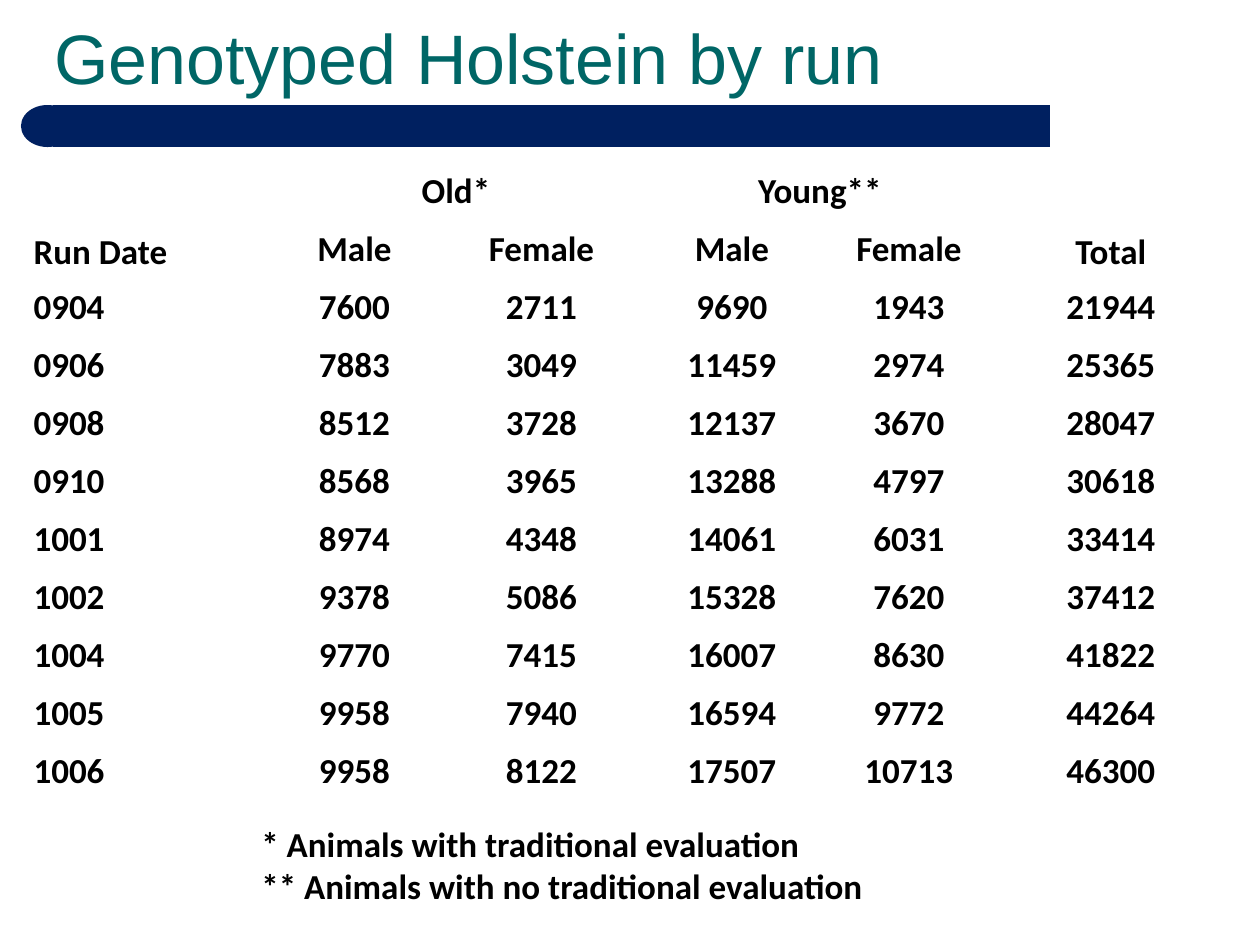
from pptx import Presentation
from pptx.dml.color import RGBColor
from pptx.enum.shapes import MSO_SHAPE
from pptx.enum.text import MSO_ANCHOR, PP_ALIGN
from pptx.util import Pt

PX = 914400 // 126
LEFT, CENTER = PP_ALIGN.LEFT, PP_ALIGN.CENTER
TOP, BOTTOM = MSO_ANCHOR.TOP, MSO_ANCHOR.BOTTOM
RECTANGLE, OVAL = MSO_SHAPE.RECTANGLE, MSO_SHAPE.OVAL

THEME = {
    "title": {"name": "Arial", "size": Pt(40), "bold": False, "color": "006666"},
    "body": {"name": "Calibri", "size": Pt(20), "bold": True, "color": "000000"},
    "bar": "002060",
}

TITLE = "Genotyped Holstein by run"
HEADERS = [
    ("Run Date", "Old*", "", "Young**", "", "Total"),
    ("", "Male", "Female", "Male", "Female", ""),
]
RUNS = [
    ("0904", 7600, 2711, 9690, 1943, 21944),
    ("0906", 7883, 3049, 11459, 2974, 25365),
    ("0908", 8512, 3728, 12137, 3670, 28047),
    ("0910", 8568, 3965, 13288, 4797, 30618),
    ("1001", 8974, 4348, 14061, 6031, 33414),
    ("1002", 9378, 5086, 15328, 7620, 37412),
    ("1004", 9770, 7415, 16007, 8630, 41822),
    ("1005", 9958, 7940, 16594, 9772, 44264),
    ("1006", 9958, 8122, 17507, 10713, 46300),
]
FOOTNOTES = [
    "* Animals with traditional evaluation",
    "** Animals with no traditional evaluation",
]

COLUMN_WIDTHS = [248, 171, 203, 178, 176, 228]
ROW_HEIGHT = 58
TABLE_LEFT, TABLE_TOP = 21, 164
# (first row, first column, last row, last column)
MERGES = [(0, 0, 1, 0), (0, 1, 0, 2), (0, 3, 0, 4), (0, 5, 1, 5)]
BAR_PARTS = [(RECTANGLE, 53, 997), (OVAL, 21, 53)]  # shape, left, width
BAR_TOP, BAR_HEIGHT = 105, 42


def emu(*lengths):
    return [length * PX for length in lengths]


def write(para, text, style, align=LEFT):
    para.alignment = align
    span = para.add_run()
    span.text = text
    for name, value in THEME[style].items():
        if name == "color":
            span.font.color.rgb = RGBColor.from_string(value)
        else:
            setattr(span.font, name, value)


def add_text(page, lines, style, area, anchor):
    frame = page.shapes.add_textbox(*emu(*area)).text_frame
    frame.word_wrap = True
    frame.vertical_anchor = anchor
    for index, line in enumerate(lines):
        para = frame.add_paragraph() if index else frame.paragraphs[0]
        write(para, line, style)


def add_bar(page):
    for kind, left, width in BAR_PARTS:
        part = page.shapes.add_shape(kind, *emu(left, BAR_TOP, width, BAR_HEIGHT))
        part.shadow.inherit = False
        part.fill.solid()
        part.fill.fore_color.rgb = RGBColor.from_string(THEME["bar"])
        part.line.fill.background()


def add_run_table(page):
    rows = HEADERS + RUNS
    area = emu(TABLE_LEFT, TABLE_TOP, sum(COLUMN_WIDTHS), ROW_HEIGHT * len(rows))
    table = page.shapes.add_table(len(rows), len(COLUMN_WIDTHS), *area).table
    table.first_row = table.horz_banding = False
    for column, width in zip(table.columns, COLUMN_WIDTHS):
        column.width = width * PX
    for row in table.rows:
        row.height = ROW_HEIGHT * PX
    for top, left, bottom, right in MERGES:
        table.cell(top, left).merge(table.cell(bottom, right))
    for r, values in enumerate(rows):
        for c, value in enumerate(values):
            cell = table.cell(r, c)
            cell.fill.background()
            if cell.is_spanned:
                continue
            tall = cell.is_merge_origin and cell.span_height > 1
            cell.vertical_anchor = BOTTOM if tall else TOP
            write(cell.text_frame.paragraphs[0], str(value), "body",
                  CENTER if c else LEFT)


def main():
    deck = Presentation()
    deck.slide_width, deck.slide_height = emu(1260, 945)
    page = deck.slides.add_slide(deck.slide_layouts[6])
    add_text(page, [TITLE], "title", (42, 21, 1134, 84), BOTTOM)
    add_run_table(page)
    add_text(page, FOOTNOTES, "body", (249, 816, 717, 97), TOP)
    add_bar(page)
    deck.save("out.pptx")


if __name__ == "__main__":
    main()
